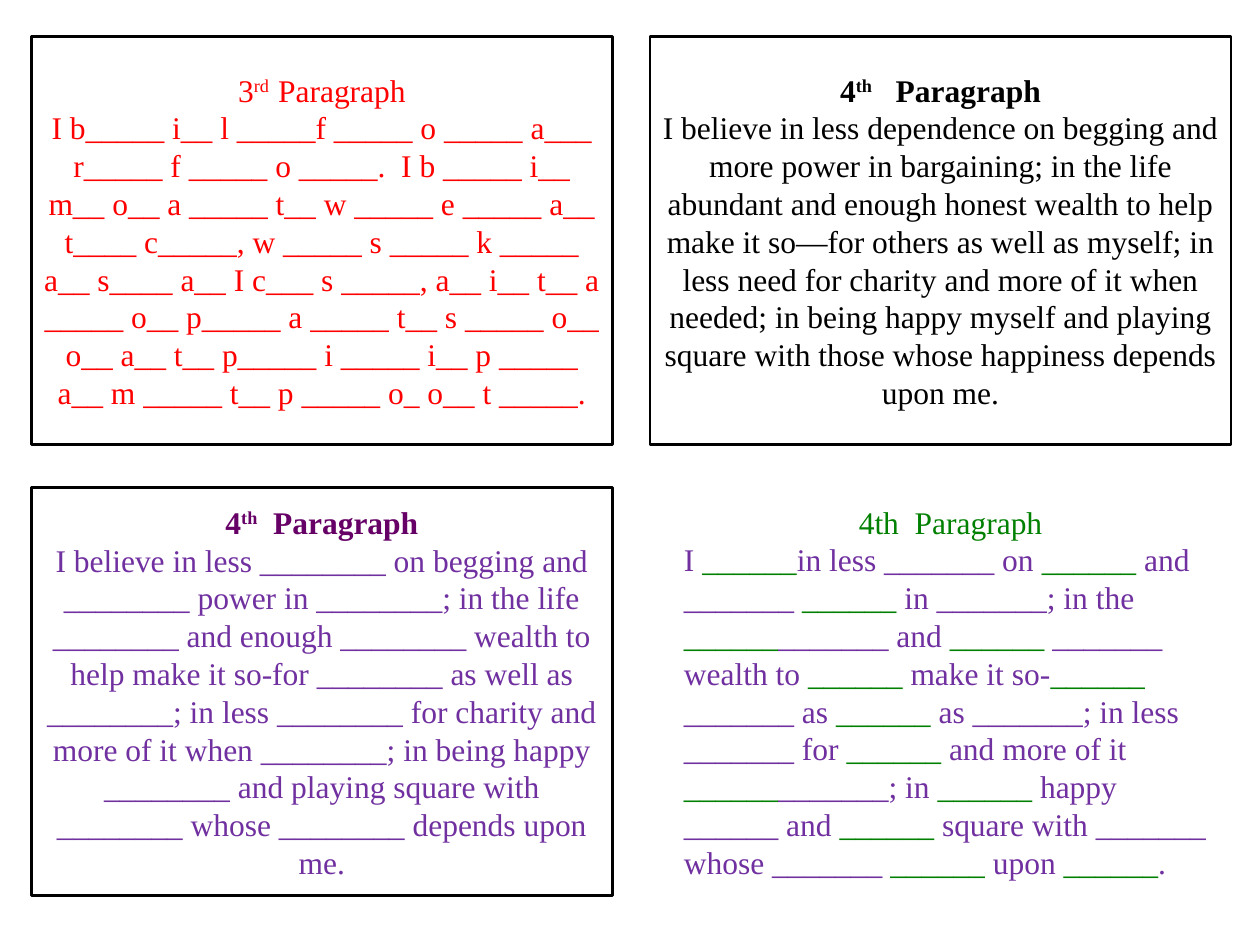
from pptx import Presentation
from pptx.dml.color import RGBColor
from pptx.enum.shapes import MSO_SHAPE
from pptx.enum.text import MSO_ANCHOR, MSO_AUTO_SIZE, PP_ALIGN
from pptx.util import Inches, Pt

COLORS = {
    "red": "FF0000",
    "black": "000000",
    "plum": "660066",
    "purple": "7030A0",
    "green": "008000",
}
FONT_NAME = "Times New Roman"
FONT_SIZE = 18

CARDS = [
    {
        "cell": (0, 0),
        "heading": ("3", "rd  ", "Paragraph"),
        "heading_color": "red",
        "bold": False,
        "body": "I b_____ i__ l _____f _____ o _____ a___ r_____ f _____ o _____.  "
                "I b _____ i__ m__ o__ a _____ t__ w _____ e _____ a__ t____ c_____, "
                "w _____ s _____ k _____ a__ s____ a__ I c___ s _____, a__ i__ t__ "
                "a _____ o__ p_____ a _____ t__ s _____ o__ o__ a__ t__ p_____ "
                "i _____ i__ p _____ a__ m _____ t__ p _____ o_ o__ t _____.",
        "body_color": "red",
    },
    {
        "cell": (1, 0),
        "heading": ("4", "th", "   Paragraph"),
        "heading_color": "black",
        "bold": True,
        "body": "I believe in less dependence on begging and more power in bargaining; "
                "in the life abundant and enough honest wealth to help make it so—for "
                "others as well as myself; in less need for charity and more of it when "
                "needed; in being happy myself and playing square with those whose "
                "happiness depends upon me.",
        "body_color": "black",
    },
    {
        "cell": (0, 1),
        "heading": ("4", "th", "  Paragraph"),
        "heading_color": "plum",
        "bold": True,
        "body": "I believe in less ________ on begging and ________ power in ________; "
                "in the life ________ and enough ________ wealth to help make it so-for "
                "________ as well as ________; in less ________ for charity and more of "
                "it when ________; in being happy ________ and playing square with "
                "________ whose ________ depends upon me.",
        "body_color": "purple",
    },
]

CLOZE_HEADING = "4th  Paragraph"
CLOZE_PIECES = [
    "I ", "______", "in less _______ on ", "______ ", "and _______ ", "______ ",
    "in _______; in the ", "______", "_______ and ", "______",
    " _______ wealth to ", "______ ", "make it so-", "______", " _______ as ",
    "______ ", "as _______; in less _______ for ", "______ ", "and more of it ",
    "______", "_______; in ", "______ ", "happy ______ and ", "______ ",
    "square with _______ whose _______ ", "______ ", "upon ", "______", ".",
]

CARD_LEFT, CARD_TOP = 0.25, 0.29
CARD_WIDTH, CARD_HEIGHT = 4.61, 3.24
COLUMN_STEP, ROW_STEP = 4.91, 3.58


def add_run(paragraph, text, color, bold=False, superscript=False):
    run = paragraph.add_run()
    run.text = text
    run.font.name = FONT_NAME
    run.font.size = Pt(FONT_SIZE)
    run.font.bold = bold
    run.font.color.rgb = RGBColor.from_string(COLORS[color])
    if superscript:
        run._r.get_or_add_rPr().set("baseline", "30000")


def add_card(slide, card):
    column, row = card["cell"]
    shape = slide.shapes.add_shape(
        MSO_SHAPE.RECTANGLE,
        Inches(CARD_LEFT + column * COLUMN_STEP),
        Inches(CARD_TOP + row * ROW_STEP),
        Inches(CARD_WIDTH),
        Inches(CARD_HEIGHT),
    )
    shape.shadow.inherit = False
    shape.fill.background()
    shape.line.color.rgb = RGBColor.from_string(COLORS["black"])
    shape.line.width = Pt(1.5)

    text_frame = shape.text_frame
    text_frame.word_wrap = True
    text_frame.vertical_anchor = MSO_ANCHOR.MIDDLE
    heading, body = text_frame.paragraphs[0], text_frame.add_paragraph()
    heading.alignment = body.alignment = PP_ALIGN.CENTER
    for index, text in enumerate(card["heading"]):
        add_run(heading, text, card["heading_color"], card["bold"], superscript=index == 1)
    add_run(body, card["body"], card["body_color"])


def add_cloze(slide):
    text_box = slide.shapes.add_textbox(Inches(5.33), Inches(3.94), Inches(4.43), Inches(3.13))
    text_frame = text_box.text_frame
    text_frame.word_wrap = True
    text_frame.auto_size = MSO_AUTO_SIZE.SHAPE_TO_FIT_TEXT
    heading, body = text_frame.paragraphs[0], text_frame.add_paragraph()
    heading.alignment = PP_ALIGN.CENTER
    add_run(heading, CLOZE_HEADING, "green")
    for index, text in enumerate(CLOZE_PIECES):
        add_run(body, text, "green" if index % 2 else "purple")


def main():
    presentation = Presentation()
    presentation.slide_width = Inches(10)
    presentation.slide_height = Inches(7.5)
    slide = presentation.slides.add_slide(presentation.slide_layouts[6])
    for card in CARDS:
        add_card(slide, card)
    add_cloze(slide)
    presentation.save("out.pptx")


if __name__ == "__main__":
    main()
